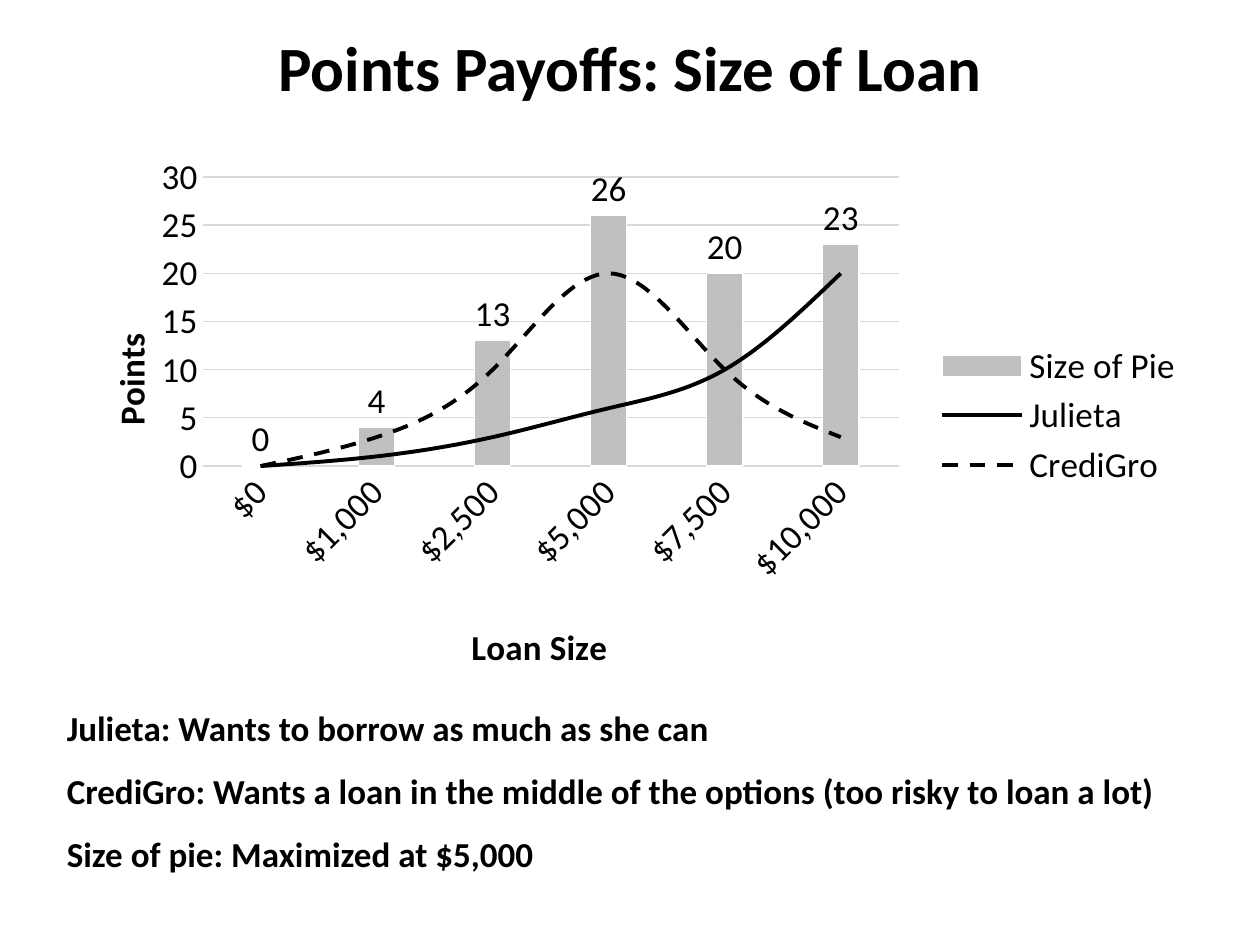
"""Build the loan payoff slide with a combined column and line chart."""
from dataclasses import dataclass
from typing import Optional

from lxml.etree import SubElement
from pptx import Presentation
from pptx.chart.data import CategoryChartData
from pptx.dml.color import RGBColor
from pptx.enum.chart import XL_CHART_TYPE as ChartType
from pptx.enum.chart import XL_LABEL_POSITION as LabelPosition
from pptx.enum.chart import XL_LEGEND_POSITION as LegendPosition
from pptx.enum.chart import XL_MARKER_STYLE as MarkerStyle
from pptx.enum.chart import XL_TICK_MARK as TickMark
from pptx.enum.dml import MSO_LINE as LineDash
from pptx.enum.text import MSO_ANCHOR as Anchor
from pptx.enum.text import MSO_AUTO_SIZE as AutoSize
from pptx.enum.text import PP_ALIGN as Align
from pptx.oxml import parse_xml
from pptx.oxml.ns import nsdecls, qn
from pptx.util import Inches, Pt

FONT = "Calibri"
COLORS = {"text": "000000", "pie": "BFBFBF", "grid": "D9D9D9", "edge": "FFFFFF"}
LOAN_SIZES = ["$0", "$1,000", "$2,500", "$5,000", "$7,500", "$10,000"]
NOTES = [
    "Julieta: Wants to borrow as much as she can",
    "CrediGro: Wants a loan in the middle of the options (too risky to loan a lot)",
    "Size of pie: Maximized at $5,000",
]


@dataclass
class Payoff:
    name: str
    points: list[int]
    dash: Optional[LineDash] = None


@dataclass
class Layout:
    parent: str
    index: int
    left: float
    top: float
    width: Optional[float] = None
    height: Optional[float] = None


PAYOFFS = [
    Payoff("Size of Pie", [0, 4, 13, 26, 20, 23]),
    Payoff("Julieta", [0, 1, 3, 6, 10, 20], LineDash.SOLID),
    Payoff("CrediGro", [0, 3, 10, 20, 10, 3], LineDash.DASH),
]
LAYOUTS = [
    Layout("c:chart/c:plotArea", 0, 0.13, 0.06, 0.61, 0.54),
    Layout("c:chart/c:plotArea/c:catAx/c:title", 1, 0.36, 0.88),
    Layout("c:chart/c:plotArea/c:valAx/c:title", 1, 0.04, 0.34),
    Layout("c:chart/c:legend", 1, 0.77, 0.36, 0.22, 0.29),
]


def color(name: str) -> RGBColor:
    return RGBColor.from_string(COLORS[name])


def style_font(font, *, size: float = 20, bold: bool = False) -> None:
    font.name, font.size, font.bold = FONT, Pt(size), bold
    font.color.rgb = color("text")


def style_line(line, name: str, width: float) -> None:
    line.color.rgb = color(name)
    line.width = Pt(width)


def write_text(paragraph, text: str, *, size: float = 20, bold: bool = True,
               align: Align = Align.LEFT, after: float = 0) -> None:
    run = paragraph.add_run()
    run.text = text
    style_font(run.font, size=size, bold=bold)
    paragraph.alignment = align
    paragraph.space_before, paragraph.space_after = Pt(0), Pt(after)


def move(shape, left: float, top: float, width: float, height: float) -> None:
    shape.left, shape.top = Inches(left), Inches(top)
    shape.width, shape.height = Inches(width), Inches(height)


def add_title(slide) -> None:
    title = slide.shapes.title
    move(title, 0, -0.1, 10, 1.25)
    title.text_frame.vertical_anchor = Anchor.MIDDLE
    write_text(title.text_frame.paragraphs[0], "Points Payoffs: Size of Loan",
               size=36, align=Align.CENTER)


def add_notes(slide) -> None:
    body = slide.placeholders[1]
    move(body, 0.43, 5.56, 9.45, 1.8)
    frame = body.text_frame
    frame.auto_size = AutoSize.NONE
    for index, note in enumerate(NOTES):
        paragraph = frame.add_paragraph() if index else frame.paragraphs[0]
        write_text(paragraph, note, after=12)
        properties = paragraph._p.get_or_add_pPr()
        properties.set("marL", "0")
        properties.set("indent", "0")
        SubElement(properties, qn("a:buNone"))


def style_axis(axis, title: str, title_rotation: int) -> None:
    axis.major_tick_mark = axis.minor_tick_mark = TickMark.NONE
    style_font(axis.tick_labels.font)
    frame = axis.axis_title.text_frame
    write_text(frame.paragraphs[0], title, align=Align.CENTER)
    frame._txBody.bodyPr.set("rot", str(title_rotation * 60000))


def convert_to_lines(chart) -> None:
    bar_chart = chart.plots[0]._element
    line_chart = parse_xml(
        f'<c:lineChart {nsdecls("c")}><c:grouping val="standard"/>'
        '<c:varyColors val="0"/><c:marker val="1"/></c:lineChart>')
    for series in bar_chart.findall(qn("c:ser"))[1:]:
        for bar_setting in series.findall(qn("c:invertIfNegative")):
            series.remove(bar_setting)
        line_chart.find(qn("c:marker")).addprevious(series)
    for axis_id in bar_chart.findall(qn("c:axId")):
        SubElement(line_chart, qn("c:axId")).set("val", axis_id.get("val"))
    bar_chart.addnext(line_chart)


def apply_layout(chart, layout: Layout) -> None:
    parent = chart.element.xpath(layout.parent)[0]
    for existing in parent.findall(qn("c:layout")):
        parent.remove(existing)
    element = parse_xml(f'<c:layout {nsdecls("c")}><c:manualLayout/></c:layout>')
    entries = {"xMode": "edge", "yMode": "edge", "x": layout.left,
               "y": layout.top, "w": layout.width, "h": layout.height}
    if layout.parent.endswith("plotArea"):
        entries = {"layoutTarget": "inner", **entries}
    for tag, value in entries.items():
        if value is not None:
            SubElement(element[0], qn(f"c:{tag}")).set("val", str(value))
    parent.insert(layout.index, element)


def style_columns(plot) -> None:
    plot.gap_width, plot.overlap, plot.vary_by_categories = 219, -27, False
    pie = plot.series[0]
    pie.format.fill.solid()
    pie.format.fill.fore_color.rgb = color("pie")
    fill_color = pie._element.xpath("c:spPr/a:solidFill/a:srgbClr")[0]
    SubElement(fill_color, qn("a:alpha")).set("val", "98000")
    style_line(pie.format.line, "edge", 0.75)
    labels = pie.data_labels
    labels.show_value, labels.position = True, LabelPosition.OUTSIDE_END
    labels.number_format, labels.number_format_is_linked = "0", False
    style_font(labels.font)


def add_payoff_chart(slide) -> None:
    data = CategoryChartData(number_format="0")
    data.categories = LOAN_SIZES
    for payoff in PAYOFFS:
        data.add_series(payoff.name, payoff.points)
    chart = slide.shapes.add_chart(
        ChartType.COLUMN_CLUSTERED, Inches(0.43), Inches(1.15),
        Inches(9.06), Inches(4.25), data).chart
    chart.has_title = False
    style_font(chart.font)
    convert_to_lines(chart)
    columns, lines = chart.plots
    style_columns(columns)
    for series, payoff in zip(lines.series, PAYOFFS[1:]):
        style_line(series.format.line, "text", 2.25)
        series.format.line.dash_style = payoff.dash
        series.marker.style, series.smooth = MarkerStyle.NONE, True
    loan_axis, points_axis = chart.category_axis, chart.value_axis
    style_axis(loan_axis, "Loan Size", 0)
    style_axis(points_axis, "Points", -90)
    loan_axis._element.xpath("c:txPr/a:bodyPr")[0].set("rot", str(-45 * 60000))
    style_line(loan_axis.format.line, "grid", 0.75)
    points_axis.format.line.fill.background()
    style_line(points_axis.major_gridlines.format.line, "grid", 0.75)
    points_axis.minimum_scale, points_axis.maximum_scale = 0, 30
    points_axis.major_unit = 5
    chart.has_legend = True
    chart.legend.position = LegendPosition.RIGHT
    chart.legend.include_in_layout = False
    style_font(chart.legend.font)
    for layout in LAYOUTS:
        apply_layout(chart, layout)


def main() -> None:
    presentation = Presentation()
    presentation.slide_width, presentation.slide_height = Inches(10), Inches(7.5)
    slide = presentation.slides.add_slide(presentation.slide_layouts[1])
    add_title(slide)
    add_notes(slide)
    add_payoff_chart(slide)
    presentation.save("out.pptx")


if __name__ == "__main__":
    main()
